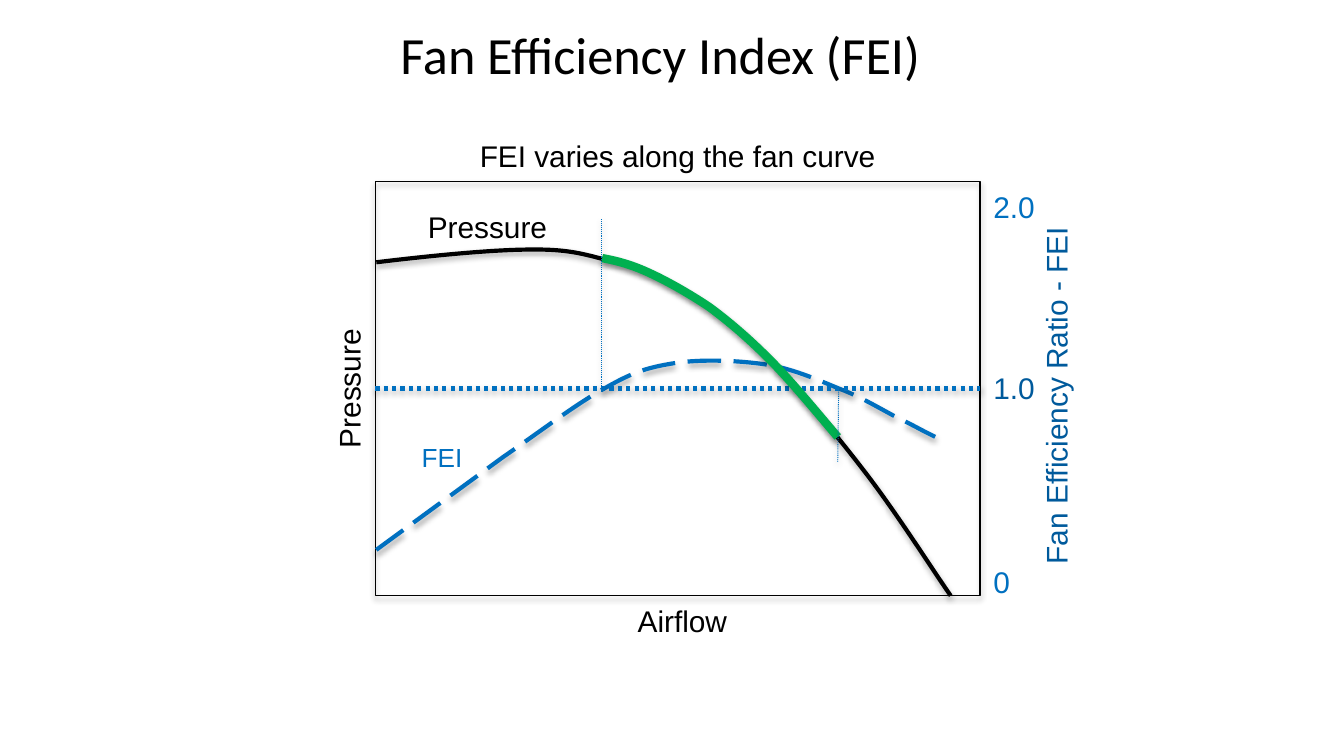
from collections import namedtuple

from lxml import etree
from pptx import Presentation
from pptx.dml.color import RGBColor
from pptx.enum.dml import MSO_LINE
from pptx.enum.shapes import MSO_CONNECTOR, MSO_SHAPE
from pptx.enum.text import MSO_ANCHOR, MSO_AUTO_SIZE, PP_ALIGN
from pptx.oxml.ns import qn
from pptx.util import Pt

BLACK = RGBColor(0x00, 0x00, 0x00)
BLUE = RGBColor(0x00, 0x70, 0xC0)
DARK_BLUE = RGBColor(0x00, 0x5A, 0x9C)
GREEN = RGBColor(0x00, 0xB0, 0x50)

Box = namedtuple("Box", "left top width height")
TITLE_BOX = Box(116.8, 10.8, 486, 36)
PLOT_BOX = Box(201.1, 97.3, 324, 221.8)

# Curves in points from the plot's top left corner: a start, then
# two control points and an end for each cubic piece.
PRESSURE_CURVE = [
    (0.5, 43.2),
    (30.2, 39.6), (60.5, 36.7), (80.6, 36.4),
    (101.5, 36), (109.4, 38.2), (122.4, 41.6),
    (135.4, 44.6), (145.4, 47.5), (158.4, 54.7),
    (171.4, 61.9), (184.3, 69.1), (201.6, 85),
    (218.2, 101.5), (243.4, 131), (260.6, 153.4),
    (278.6, 176.4), (298.1, 207.4), (308.2, 221.8),
]
FEI_CURVE = [
    (0.5, 197.3), (68.4, 147.6),
    (89.3, 133.2), (108, 118.8), (123.8, 110.2),
    (139, 101.5), (146.9, 99.4), (160.6, 97.2),
    (175, 95), (194.4, 95.8), (208.8, 97.9),
    (223.2, 100.1), (236.2, 105.8), (248.4, 110.9),
    (259.9, 115.2), (269.3, 121), (280.1, 126.7),
    (289.4, 131), (290.9, 132.5), (304.6, 139),
]
EFFICIENT_RANGE = [
    (121.5, 41),
    (129.6, 42.5), (137.5, 44.6), (146.9, 49),
    (156.2, 53.3), (167.8, 59.8), (178.6, 67),
    (189.4, 74.9), (200.2, 84.2), (211.7, 95.8),
    (223.2, 107.3), (239, 126.7), (247.7, 136.8),
]
RANGE_LIMITS = [((248.2, 110.9), (247.7, 150.5)), ((121.3, 20.2), (121.3, 112.3))]


def style_line(shape, color, width, dash=None, opacity=35, distance=1.8):
    """Set the outline and a soft shadow straight below it."""
    shape.line.color.rgb = color
    shape.line.width = Pt(width)
    if dash is not None:
        shape.line.dash_style = dash
    effects = etree.SubElement(shape._element.spPr, qn("a:effectLst"))
    shadow = etree.SubElement(
        effects, qn("a:outerShdw"), blurRad=str(Pt(3.1)), dist=str(Pt(distance)),
        dir="5400000", rotWithShape="0")
    tint = etree.SubElement(shadow, qn("a:srgbClr"), val="000000")
    etree.SubElement(tint, qn("a:alpha"), val=str(opacity * 1000))


def add_curve(page, box, points, color, width, dash=None, straight=0):
    """Draw cubic pieces that follow a number of straight leading segments."""
    start, *rest = [(Pt(box.left + x), Pt(box.top + y)) for x, y in points]
    builder = page.shapes.build_freeform(*start)
    builder.add_line_segments(rest, close=False)
    curve = builder.convert_to_shape()
    segments = list(curve._element.iter(qn("a:lnTo")))[straight:]
    for first in range(0, len(segments), 3):
        cubic = etree.Element(qn("a:cubicBezTo"))
        segments[first].addprevious(cubic)
        for segment in segments[first:first + 3]:
            cubic.append(segment[0])
            segment.getparent().remove(segment)
    curve.fill.background()
    style_line(curve, color, width, dash)


def add_dotted_line(page, box, start, end, width):
    line = page.shapes.add_connector(
        MSO_CONNECTOR.STRAIGHT, Pt(box.left + start[0]), Pt(box.top + start[1]),
        Pt(box.left + end[0]), Pt(box.top + end[1]))
    style_line(line, BLUE, width, MSO_LINE.ROUND_DOT, opacity=38, distance=1.6)
    return line


def add_label(page, box, text, color=BLACK, size=16, align=PP_ALIGN.CENTER, upward=False):
    label = page.shapes.add_textbox(*map(Pt, box))
    frame = label.text_frame
    frame.word_wrap = True
    frame.auto_size = MSO_AUTO_SIZE.SHAPE_TO_FIT_TEXT
    if upward:
        frame._txBody.bodyPr.set("vert", "vert270")
    para = frame.paragraphs[0]
    para.text = text
    para.alignment = align
    para.font.name = "Arial"
    para.font.size = Pt(size)
    para.font.color.rgb = color


def add_title(page, box, text):
    title = page.shapes.title
    title.left, title.top, title.width, title.height = map(Pt, box)
    frame = title.text_frame
    frame.vertical_anchor = MSO_ANCHOR.MIDDLE
    frame.margin_right = Pt(19.4)
    para = frame.paragraphs[0]
    para.text = text
    para.alignment = PP_ALIGN.CENTER
    para.font.name = "Calibri"
    para.font.size = Pt(28)
    para.font.color.rgb = BLACK


def add_plot(page, box):
    """Draw the frame, the two curves and the marked range."""
    frame = page.shapes.add_shape(MSO_SHAPE.RECTANGLE, *map(Pt, box))
    frame.fill.background()
    style_line(frame, BLACK, 0.75)
    add_curve(page, box, PRESSURE_CURVE, BLACK, 2.25)
    add_curve(page, box, FEI_CURVE, BLUE, 2.25, MSO_LINE.LONG_DASH, straight=1)
    middle = box.height / 2
    unity_line = add_dotted_line(page, box, (0, middle), (box.width, middle), 2.25)
    unity_line.begin_connect(frame, 1)
    unity_line.end_connect(frame, 3)
    add_curve(page, box, EFFICIENT_RANGE, GREEN, 4.5)
    for start, end in RANGE_LIMITS:
        add_dotted_line(page, box, start, end, 0.5)


def add_plot_labels(page, box):
    left, top, width, height = box
    right, bottom = left + width, top + height
    add_label(page, Box(left, top - 27, width, 26.6), "FEI varies along the fan curve")
    add_label(page, Box(left, bottom, 329, 26.6), "Airflow")
    add_label(page, Box(left - 27.4, top, 33.8, height), "Pressure", upward=True)
    add_label(page, Box(right + 27.4, top + 3.8, 33.8, height),
              "Fan Efficiency Ratio - FEI", DARK_BLUE, upward=True)
    for text, offset, label_width, color in (
            ("0", 201.1, 18, BLUE), ("1.0", 97.2, 46, DARK_BLUE), ("2.0", 0.3, 46, BLUE)):
        add_label(page, Box(right, top + offset, label_width, 26.6), text, color,
                  align=PP_ALIGN.LEFT)
    add_label(page, Box(left + 17.7, top + 135.8, 37.4, 24.5), "FEI", BLUE, 14, PP_ALIGN.LEFT)
    add_label(page, Box(left + 18.3, top + 11, 83.5, 26.6), "Pressure")


def main():
    deck = Presentation()
    deck.slide_width, deck.slide_height = Pt(720), Pt(405)
    page = deck.slides.add_slide(deck.slide_layouts[5])
    add_title(page, TITLE_BOX, "Fan Efficiency Index (FEI)")
    add_plot(page, PLOT_BOX)
    add_plot_labels(page, PLOT_BOX)
    deck.save("out.pptx")


if __name__ == "__main__":
    main()
